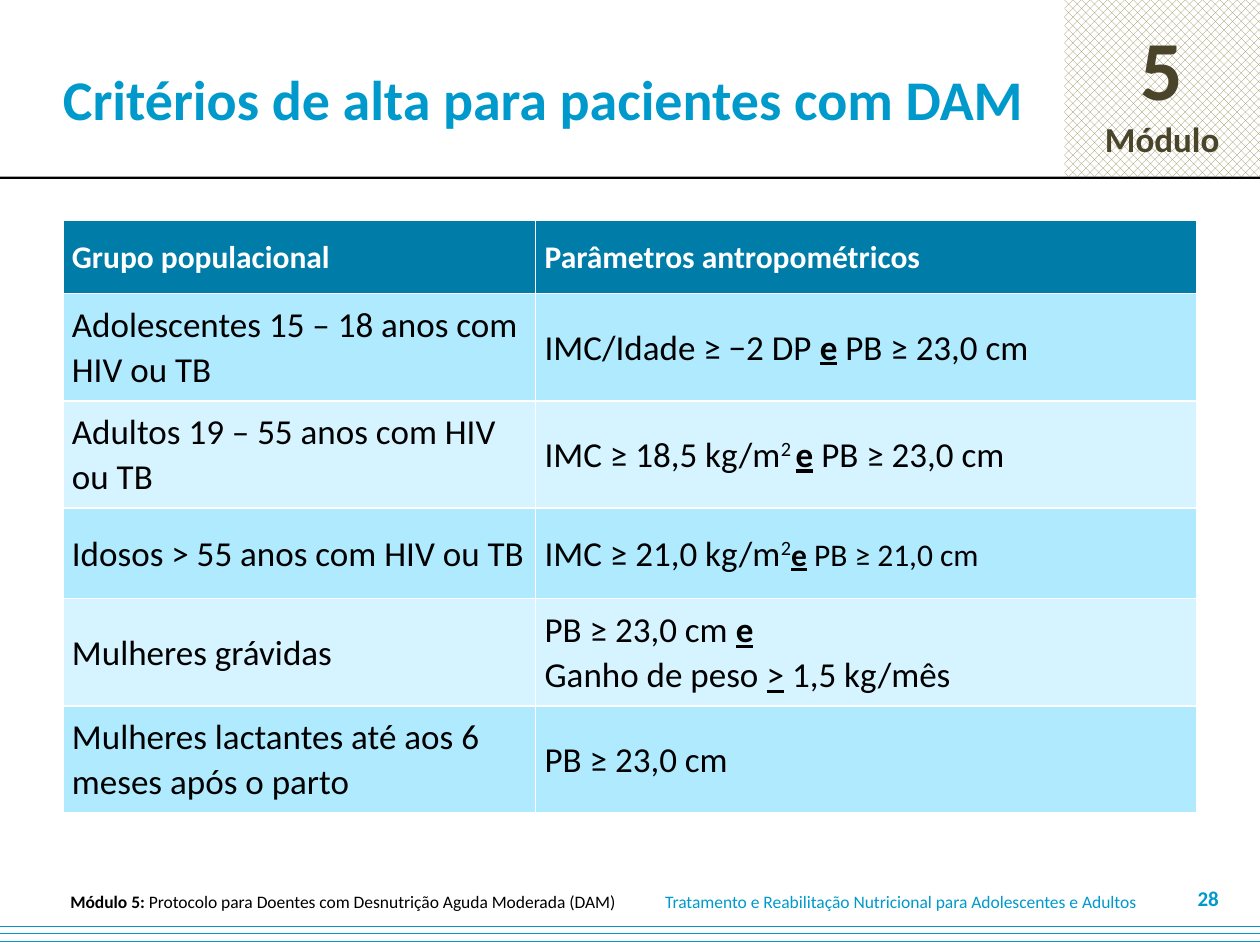
from dataclasses import dataclass

import pptx
import pptx.dml.color
import pptx.enum.dml
import pptx.enum.shapes
import pptx.enum.text
import pptx.oxml
import pptx.oxml.ns
import pptx.util
from pptx.util import Cm

COLORS = {
    "accent": "0099CC", "header": "007CA8", "band_dark": "AFEAFF", "band_light": "D5F4FF",
    "olive": "948A54", "brown": "4A452A", "black": "000000", "white": "FFFFFF",
}
FONT = "Calibri"
ALIGN = pptx.enum.text.PP_ALIGN
MIDDLE = pptx.enum.text.MSO_ANCHOR.MIDDLE
PATTERN = pptx.enum.dml.MSO_PATTERN


@dataclass
class Run:
    text: str
    bold: bool = False
    underline: bool = False
    superscript: bool = False
    size: float | None = None


@dataclass
class Paragraph:
    runs: list[Run]
    size: float
    color: str
    align: ALIGN = ALIGN.LEFT
    line_spacing: float | None = None


@dataclass
class Box:
    """Position and size in centimetres."""
    left: float
    top: float
    width: float
    height: float

    def lengths(self) -> tuple:
        return Cm(self.left), Cm(self.top), Cm(self.width), Cm(self.height)


AND = Run("e", bold=True, underline=True)
SQUARED = Run("2", superscript=True)

# Each body row: height in cm, group, lines of the criterion
ROWS = [
    (2.16, "Adolescentes 15 – 18 anos com HIV ou TB",
     [[Run("IMC/Idade ≥ −2 DP "), AND, Run(" PB ≥ 23,0 cm")]]),
    (2.16, "Adultos 19 – 55 anos com HIV ou TB",
     [[Run("IMC ≥ 18,5 kg/m"), Run("2 ", superscript=True), AND, Run(" PB ≥ 23,0 cm")]]),
    (1.83, "Idosos > 55 anos com HIV ou TB",
     [[Run("IMC ≥ 21,0 kg/m"), SQUARED, Run("e", bold=True, underline=True, size=18),
       Run(" PB ≥ 21,0 cm", size=18)]]),
    (2.16, "Mulheres grávidas",
     [[Run("PB ≥ 23,0 cm "), AND],
      [Run("Ganho de peso "), Run(">", underline=True), Run(" 1,5 kg/mês")]]),
    (2.16, "Mulheres lactantes até aos 6 meses após o parto",
     [[Run("PB ≥ 23,0 cm")]]),
]
HEADINGS = ["Grupo populacional", "Parâmetros antropométricos"]
HEADER_HEIGHT = 1.47
COLUMN_WIDTHS = [9.53, 13.33]


def rgb(name: str) -> pptx.dml.color.RGBColor:
    return pptx.dml.color.RGBColor.from_string(COLORS[name])


def write(tf, paragraphs: list[Paragraph]) -> None:
    for i, para in enumerate(paragraphs):
        p = tf.add_paragraph() if i else tf.paragraphs[0]
        p.alignment = para.align
        if para.line_spacing:
            p.line_spacing = para.line_spacing
        p.font.name = FONT
        p.font.size = pptx.util.Pt(para.size)
        p.font.color.rgb = rgb(para.color)
        for run in para.runs:
            r = p.add_run()
            r.text = run.text
            r.font.name = FONT
            r.font.size = pptx.util.Pt(run.size or para.size)
            r.font.color.rgb = rgb(para.color)
            r.font.bold = run.bold
            r.font.underline = run.underline
            if run.superscript:
                r._r.get_or_add_rPr().set("baseline", "30000")


def add_rect(s, box: Box, color: str, pattern: PATTERN | None = None):
    sp = s.shapes.add_shape(pptx.enum.shapes.MSO_SHAPE.RECTANGLE, *box.lengths())
    sp.shadow.inherit = False
    sp.line.fill.background()
    if pattern is None:
        sp.fill.solid()
    else:
        sp.fill.patterned()
        sp.fill.pattern = pattern
        sp.fill.back_color.rgb = rgb("white")
    sp.fill.fore_color.rgb = rgb(color)
    return sp


def add_text(s, box: Box, paragraph: Paragraph, margin_left: float = 0.25) -> None:
    tf = s.shapes.add_textbox(*box.lengths()).text_frame
    tf.word_wrap = True
    tf.vertical_anchor = MIDDLE
    tf.margin_left = Cm(margin_left)
    write(tf, [paragraph])


def fill_cell(cell, color: str, paragraphs: list[Paragraph]) -> None:
    """Fill a table cell and give it thin white borders."""
    cell.margin_left = cell.margin_right = Cm(0.18)
    cell.margin_top = cell.margin_bottom = 0
    cell.vertical_anchor = MIDDLE
    cell.fill.solid()
    cell.fill.fore_color.rgb = rgb(color)
    tc_pr = cell._tc.get_or_add_tcPr()
    for i, side in enumerate(("lnL", "lnR", "lnT", "lnB")):
        tc_pr.insert(i, pptx.oxml.parse_xml(
            f'<a:{side} {pptx.oxml.ns.nsdecls("a")} w="12700"><a:solidFill>'
            f'<a:srgbClr val="{COLORS["white"]}"/></a:solidFill></a:{side}>'))
    write(cell.text_frame, paragraphs)


def add_criteria_table(s) -> None:
    heights = [HEADER_HEIGHT] + [height for height, _, _ in ROWS]
    box = Box(1.27, 4.45, sum(COLUMN_WIDTHS), sum(heights))
    table = s.shapes.add_table(len(heights), len(COLUMN_WIDTHS), *box.lengths()).table
    for column, width in zip(table.columns, COLUMN_WIDTHS):
        column.width = Cm(width)
    for row, height in zip(table.rows, heights):
        row.height = Cm(height)
    for c, heading in enumerate(HEADINGS):
        fill_cell(table.cell(0, c), "header",
                  [Paragraph([Run(heading, bold=True)], 18, "white", line_spacing=1.05)])
    for i, (_, group, lines) in enumerate(ROWS, start=1):
        band = "band_dark" if i % 2 else "band_light"
        fill_cell(table.cell(i, 0), band,
                  [Paragraph([Run(group)], 20, "black", line_spacing=1.05)])
        fill_cell(table.cell(i, 1), band,
                  [Paragraph(line, 20, "black", ALIGN.JUSTIFY, 1.05) for line in lines])


def main() -> None:
    prs = pptx.Presentation()
    prs.slide_width, prs.slide_height = Cm(25.4), Cm(19.05)
    s = prs.slides.add_slide(prs.slide_layouts[6])

    badge = add_rect(s, Box(21.46, 0, 3.94, 3.56), "olive", PATTERN.PERCENT_50)
    badge.text_frame.vertical_anchor = MIDDLE
    write(badge.text_frame, [
        Paragraph([Run("5", bold=True)], 48, "brown", ALIGN.CENTER),
        Paragraph([Run("Módulo", bold=True)], 20, "brown", ALIGN.CENTER),
    ])
    add_rect(s, Box(0, 3.56, 25.4, 0.05), "black")
    add_rect(s, Box(0, 18.52, 25.4, 0.53), "accent", PATTERN.DASHED_HORIZONTAL)

    add_text(s, Box(0, 0, 21.79, 3.94),
             Paragraph([Run("Critérios de alta para pacientes com DAM", bold=True)], 32, "accent"),
             margin_left=1.27)
    add_criteria_table(s)

    add_text(s, Box(0.74, 17.91, 12.34, 0.51), Paragraph(
        [Run("Módulo 5: ", bold=True),
         Run("Protocolo para Doentes com Desnutrição Aguda Moderada (DAM)")],
        10, "black", ALIGN.CENTER))
    add_text(s, Box(13.16, 17.91, 10.29, 0.51), Paragraph(
        [Run("Tratamento e Reabilitação Nutricional para Adolescentes e Adultos")], 10, "accent"))
    add_text(s, Box(23.55, 17.78, 1.27, 0.64),
             Paragraph([Run("28", bold=True)], 12, "accent", ALIGN.RIGHT))
    prs.save("out.pptx")


if __name__ == "__main__":
    main()
